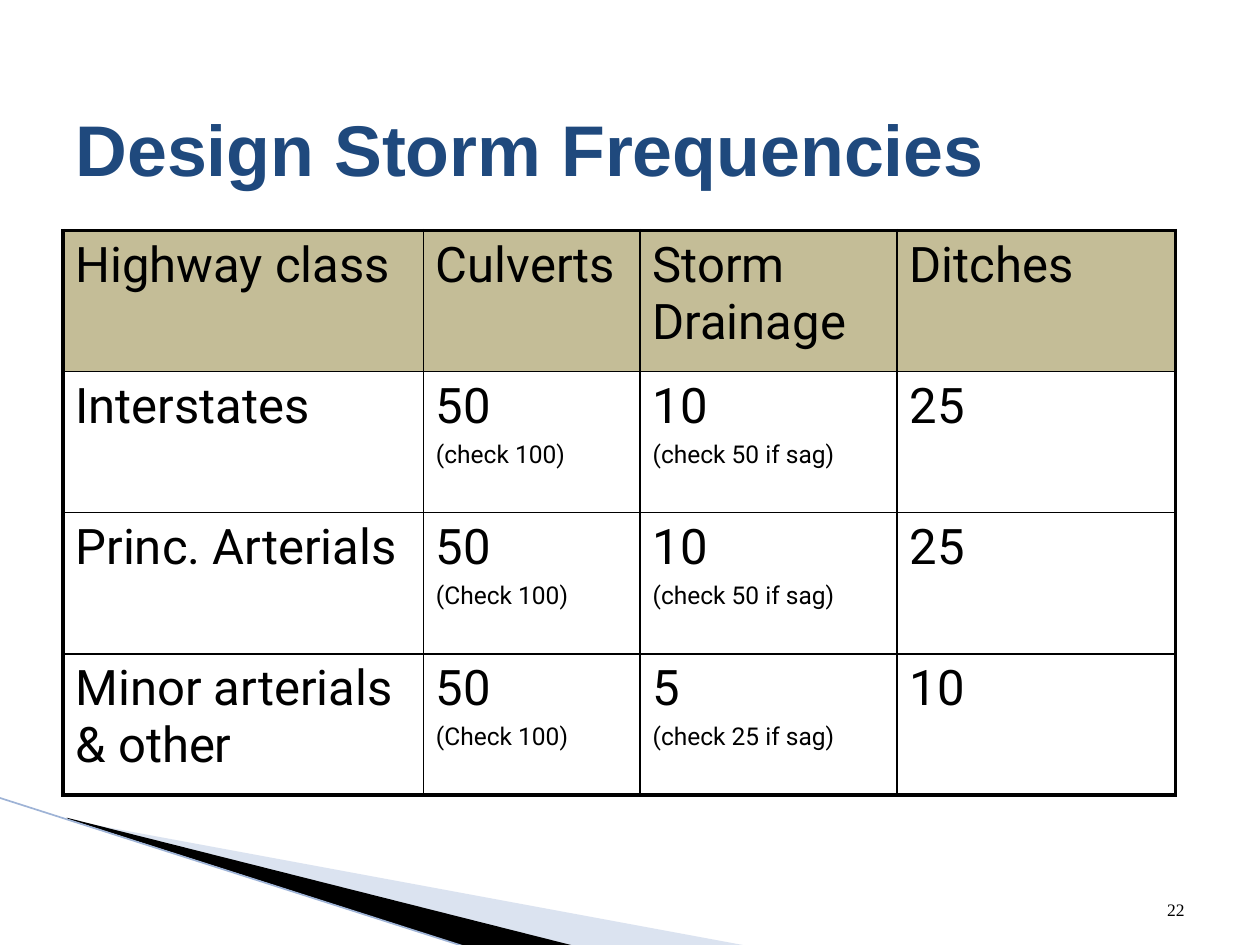
from dataclasses import dataclass

from lxml import etree
from pptx import Presentation
from pptx.dml.color import RGBColor
from pptx.enum.shapes import MSO_CONNECTOR
from pptx.enum.text import MSO_ANCHOR, PP_ALIGN
from pptx.oxml.ns import qn
from pptx.util import Pt

LINE = MSO_CONNECTOR.STRAIGHT
MID, LOW = MSO_ANCHOR.MIDDLE, MSO_ANCHOR.BOTTOM
LEFT, RIGHT = PP_ALIGN.LEFT, PP_ALIGN.RIGHT
SCALE = 9144


@dataclass(frozen=True)
class Theme:
    ink: str = "000000"
    blue: str = "1F497D"
    pale: str = "A7B9DB"
    edge: str = "9EB3D6"
    tan: str = "C4BD97"
    head: str = "Arial"
    body: str = "Roboto"
    serif: str = "Times New Roman"
    title: int = 41
    cell: int = 28
    note: int = 14
    page: int = 10
    gap: float = 2.8
    thin: float = 1
    thick: float = 2.25
    hair: float = 0.95


def px(n):
    return n * SCALE


def rgb(code):
    return RGBColor.from_string(code)


class Deck:
    def __init__(self, theme):
        self.theme = theme
        self.file = Presentation()
        self.file.slide_width, self.file.slide_height = px(1000), px(750)
        self.slide = self.file.slides.add_slide(self.file.slide_layouts[6])
        self.shapes = self.slide.shapes

    def style(self, para, face, size, color, bold=False):
        for run in para.runs:
            font = run.font
            font.name, font.size, font.bold = face, Pt(size), bold
            font.color.rgb = rgb(color)

    def wedge(self, points, color, alpha=100):
        pen = self.shapes.build_freeform(*points[0], scale=SCALE)
        pen.add_line_segments(points[1:], close=True)
        shape = pen.convert_to_shape()
        shape.shadow.inherit = False
        shape.line.fill.background()
        shape.fill.solid()
        shape.fill.fore_color.rgb = rgb(color)
        if alpha < 100:
            tint = shape.fill._xPr.find(".//" + qn("a:srgbClr"))
            etree.SubElement(tint, qn("a:alpha"), val=str(alpha * 1000))

    def rule(self, x, y, right, base, color, width):
        line = self.shapes.add_connector(LINE, px(x), px(y), px(right), px(base))
        line.line.color.rgb = rgb(color)
        line.line.width = Pt(width)
        etree.SubElement(line._element.spPr, qn("a:effectLst"))

    def text(self, words, box, face, size, color, bold=False, align=LEFT, anchor=MID):
        frame = self.shapes.add_textbox(*map(px, box)).text_frame
        frame.word_wrap = True
        frame.vertical_anchor = anchor
        frame.text = words
        para = frame.paragraphs[0]
        para.alignment = align
        self.style(para, face, size, color, bold)

    def border(self, cell, sides):
        props = cell._tc.get_or_add_tcPr()
        for side, width in sides.items():
            line = etree.SubElement(props, qn("a:ln" + side), w=str(Pt(width)))
            fill = etree.SubElement(line, qn("a:solidFill"))
            etree.SubElement(fill, qn("a:srgbClr"), val=self.theme.ink)

    def fill(self, cell, words, head):
        look = self.theme
        cell.text_frame.text = words
        for i, para in enumerate(cell.text_frame.paragraphs):
            if i:
                para.space_before = Pt(look.gap)
            self.style(para, look.body, look.note if i else look.cell, look.ink)
        if head:
            cell.fill.solid()
            cell.fill.fore_color.rgb = rgb(look.tan)
        else:
            cell.fill.background()

    def table(self, rows, x, y, widths, height):
        look = self.theme
        down, across = len(rows), len(widths)
        grid = self.shapes.add_table(
            down, across, px(x), px(y), px(sum(widths)), px(height * down)
        ).table
        grid.first_row = grid.horz_banding = False
        for col, width in zip(grid.columns, widths):
            col.width = px(width)
        for r, row in enumerate(rows):
            grid.rows[r].height = px(height)
            for c, words in enumerate(row):
                cell = grid.cell(r, c)
                outer = {"L": c == 0, "R": c == across - 1, "T": r == 0, "B": r == down - 1}
                self.border(cell, {s: look.thick if o else look.thin for s, o in outer.items()})
                self.fill(cell, words, r == 0)


def main():
    look = Theme()
    deck = Deck(look)
    deck.wedge([(55, 651), (595, 751), (456, 751), (55, 650)], look.pale, 40)
    deck.wedge([(53, 649), (457, 751), (372, 752), (54, 650)], look.ink)
    deck.rule(-1, 633, 371, 752, look.edge, look.hair)
    deck.text("Design Storm Frequencies", (50, 42, 900, 150),
              look.head, look.title, look.blue, bold=True)
    rows = [
        ["Highway class", "Culverts", "Storm Drainage", "Ditches"],
        ["Interstates", "50\n(check 100)", "10\n(check 50 if sag)", "25"],
        ["Princ. Arterials", "50\n(Check 100)", "10\n(check 50 if sag)", "25"],
        ["Minor arterials & other", "50\n(Check 100)", "5\n(check 25 if sag)", "10"],
    ]
    deck.table(rows, 50, 183, [286, 172, 204, 221], 112)
    deck.text("22", (717, 683, 233, 52), look.serif, look.page, look.ink,
              align=RIGHT, anchor=LOW)
    deck.file.save("out.pptx")


if __name__ == "__main__":
    main()
